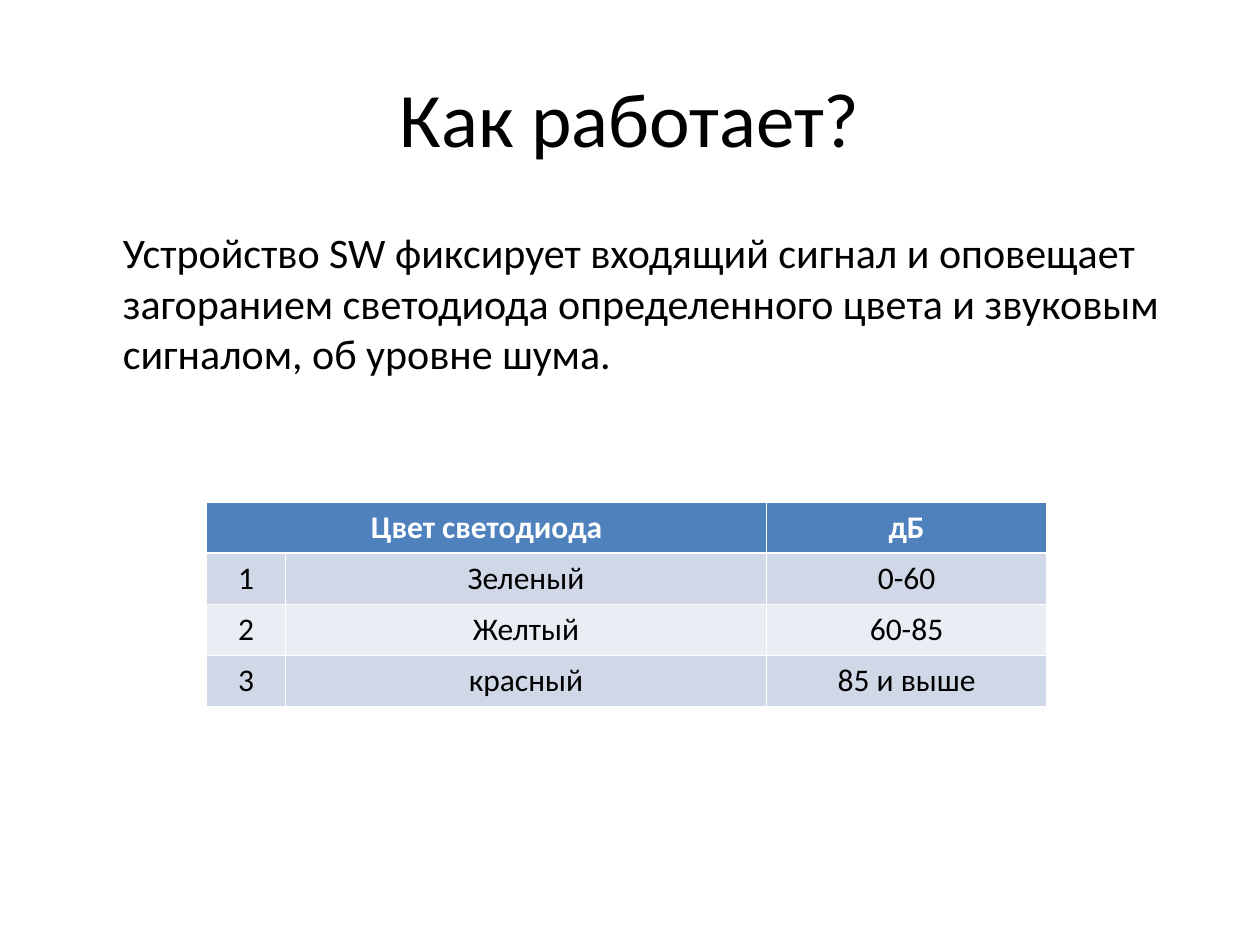
from pptx import Presentation
from pptx.dml.color import RGBColor
from pptx.enum.text import MSO_ANCHOR as Anchor, PP_ALIGN as Align
from pptx.util import Pt

BLACK = RGBColor(0x00, 0x00, 0x00)
WHITE = RGBColor(0xFF, 0xFF, 0xFF)
HEADER_BLUE = RGBColor(0x4F, 0x81, 0xBD)
BAND_DARK = RGBColor(0xD0, 0xD8, 0xE8)
BAND_LIGHT = RGBColor(0xE9, 0xED, 0xF4)

FONT = "Calibri"
TITLE = "Как работает?"
DESCRIPTION = (
    "Устройство SW фиксирует входящий сигнал и оповещает загоранием "
    "светодиода определенного цвета и звуковым сигналом, об уровне шума."
)
NOISE_LEVELS = [
    ("Цвет светодиода", "", "дБ"),
    ("1", "Зеленый", "0-60"),
    ("2", "Желтый", "60-85"),
    ("3", "красный", "85 и выше"),
]
COLUMN_WIDTHS = (45, 275, 160)
ROW_HEIGHT = 29.2


def write(frame, words, size, color=BLACK, bold=False, align=Align.CENTER):
    """Write one styled run into the first paragraph of a text frame."""
    paragraph = frame.paragraphs[0]
    paragraph.alignment = align
    run = paragraph.add_run()
    run.text = words
    run.font.name = FONT
    run.font.size = Pt(size)
    run.font.bold = bold
    run.font.color.rgb = color
    return paragraph


def add_frame(slide, left, top, width, height, anchor):
    """Add a wrapping text box and return its text frame."""
    box = slide.shapes.add_textbox(Pt(left), Pt(top), Pt(width), Pt(height))
    frame = box.text_frame
    frame.word_wrap = True
    frame.vertical_anchor = anchor
    return frame


def add_title(slide):
    """Add the centred slide title."""
    write(add_frame(slide, 36, 21.6, 648, 90, Anchor.MIDDLE), TITLE, 44)


def add_description(slide):
    """Add the indented paragraph on how the device works."""
    frame = add_frame(slide, 36, 126, 648, 356.4, Anchor.TOP)
    frame.margin_left = Pt(34.2)
    paragraph = write(frame, DESCRIPTION, 24, align=Align.LEFT)
    paragraph.space_before = Pt(4.8)


def add_noise_table(slide):
    """Add the table of LED colours and noise levels."""
    row_count = len(NOISE_LEVELS)
    table = slide.shapes.add_table(
        row_count, len(COLUMN_WIDTHS), Pt(118.1), Pt(286.9),
        Pt(sum(COLUMN_WIDTHS)), Pt(ROW_HEIGHT * row_count),
    ).table
    for column, width in zip(table.columns, COLUMN_WIDTHS):
        column.width = Pt(width)
    table.cell(0, 0).merge(table.cell(0, 1))
    for index, (row, entries) in enumerate(zip(table.rows, NOISE_LEVELS)):
        row.height = Pt(ROW_HEIGHT)
        header = index == 0
        band = BAND_DARK if index % 2 else BAND_LIGHT
        for cell, entry in zip(row.cells, entries):
            cell.fill.solid()
            cell.fill.fore_color.rgb = HEADER_BLUE if header else band
            if entry:
                write(cell.text_frame, entry, 18, WHITE if header else BLACK, header)


def main():
    """Build and save the slide."""
    deck = Presentation()
    deck.slide_width, deck.slide_height = Pt(720), Pt(540)
    slide = deck.slides.add_slide(deck.slide_layouts[6])
    add_title(slide)
    add_description(slide)
    add_noise_table(slide)
    deck.save("out.pptx")


if __name__ == "__main__":
    main()
